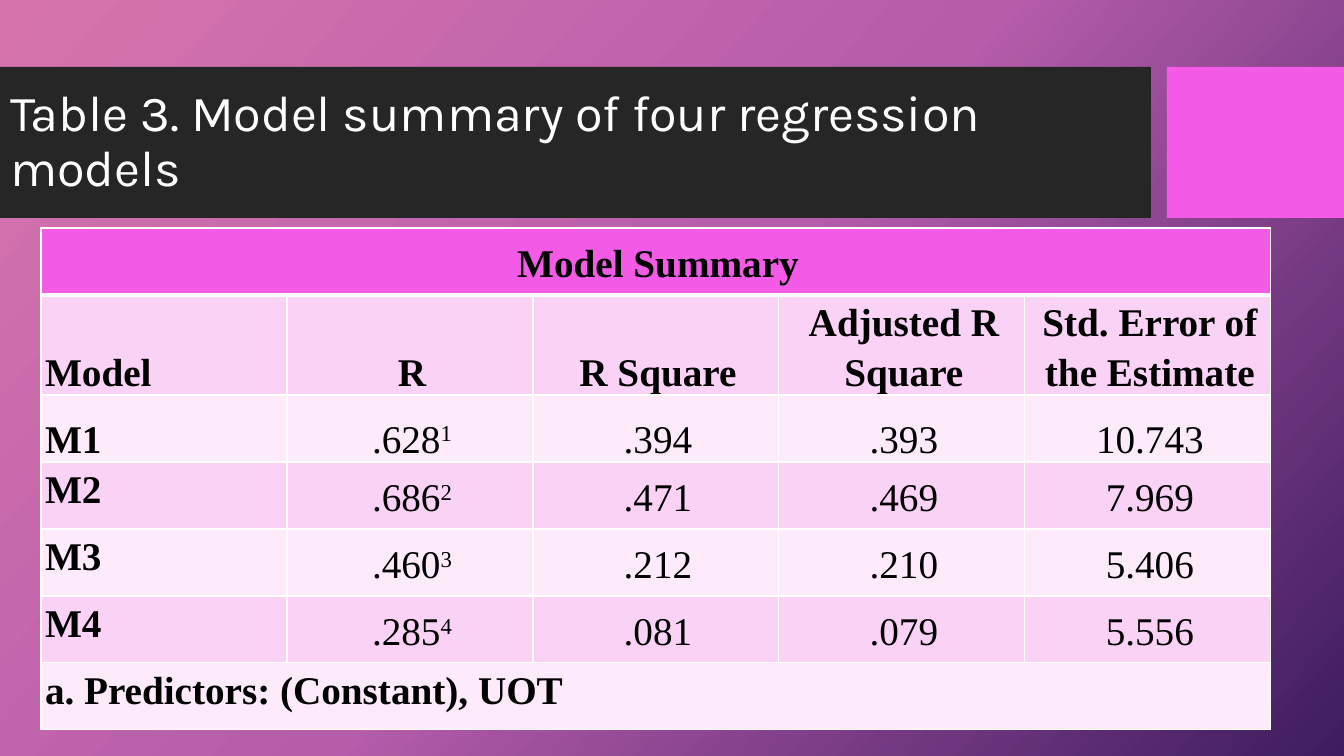
import copy

import pptx
import pptx.dml.color
import pptx.enum.shapes
import pptx.enum.text
import pptx.oxml
import pptx.oxml.ns
import pptx.util

EMU_PER_PX = 12192000 / 1344
ALIGN = pptx.enum.text.PP_ALIGN
ANCHOR = pptx.enum.text.MSO_ANCHOR

PINK = "F35AE6"
BANDS = ["FDEAFA", "FAD2F5"]
ROWS = [
    ["Model Summary"],
    ["Model", "R", "R Square", "Adjusted R Square", "Std. Error of the Estimate"],
    ["M1", (".628", "1"), ".394", ".393", "10.743"],
    ["M2", (".686", "2"), ".471", ".469", "7.969"],
    ["M3", (".460", "3"), ".212", ".210", "5.406"],
    ["M4", (".285", "4"), ".081", ".079", "5.556"],
    ["a. Predictors: (Constant), UOT"],
]
COLUMNS = 5
ROW_HEIGHT = 67
HEADING_HEIGHT = 100


def px(length):
    return pptx.util.Emu(round(length * EMU_PER_PX))


def colour(value):
    return pptx.dml.color.RGBColor.from_string(value)


def paint_background(slide):
    fill = slide.background.fill
    fill.gradient()
    fill.gradient_angle = 360 - 42
    first = slide.element.xpath(".//a:gsLst/a:gs")[0]
    first.addnext(copy.deepcopy(first))
    stops = [(0, "D774AD"), (0.5, "B55CAB"), (1, "3E1C5F")]
    for stop, (position, value) in zip(fill.gradient_stops, stops):
        stop.position = position
        stop.color.rgb = colour(value)


def add_run(para, text, font, size, value, bold=False):
    span = para.add_run()
    span.text = text
    span.font.name = font
    span.font.size = pptx.util.Pt(size)
    span.font.bold = bold
    span.font.color.rgb = colour(value)
    return span


def add_bar(slide, left, top, width, height, value):
    bar = slide.shapes.add_shape(
        pptx.enum.shapes.MSO_SHAPE.RECTANGLE, px(left), px(top), px(width), px(height))
    bar.shadow.inherit = False
    bar.fill.solid()
    bar.fill.fore_color.rgb = colour(value)
    bar.line.fill.background()


def add_title_band(slide, left, top, width, height):
    accent = 177
    gap = 16
    add_bar(slide, left, top, width - accent - gap, height, "262626")
    add_bar(slide, left + width - accent, top, accent, height, PINK)

    title = slide.shapes.title
    slide.shapes.element.append(title.element)  # bring in front of the bars
    title.left, title.top = px(left), px(top + 16)
    title.width, title.height = px(1158), px(119)
    frame = title.text_frame
    frame.word_wrap = True
    frame.auto_size = pptx.enum.text.MSO_AUTO_SIZE.NONE
    frame.vertical_anchor = ANCHOR.MIDDLE
    para = frame.paragraphs[0]
    para.alignment = ALIGN.LEFT
    para.line_spacing = 0.9
    add_run(para, "Table 3. Model summary of four regression models", "Karla", 36, "FFFFFF")


def set_borders(cell, row):
    """White rules, with a thick one between the top row and the next."""
    properties = cell._tc.get_or_add_tcPr()
    widths = {"L": 1, "R": 1, "T": 3 if row == 1 else 1, "B": 3 if row == 0 else 1}
    for side, width in widths.items():
        properties.append(pptx.oxml.parse_xml(
            f'<a:ln{side} {pptx.oxml.ns.nsdecls("a")} w="{pptx.util.Pt(width)}">'
            '<a:solidFill><a:srgbClr val="FFFFFF"/></a:solidFill>'
            f'</a:ln{side}>'))


def cell_anchor(row, column):
    if row in (1, 2):
        return ANCHOR.BOTTOM
    if row == 0 or column > 0:
        return ANCHOR.MIDDLE
    return ANCHOR.TOP


def fill_cell(cell, content, row, column):
    cell.margin_left = cell.margin_right = cell.margin_top = cell.margin_bottom = 0
    cell.vertical_anchor = cell_anchor(row, column)
    para = cell.text_frame.paragraphs[0]
    para.alignment = ALIGN.CENTER if row == 0 or column > 0 else ALIGN.LEFT
    para.line_spacing = 1.15
    indent = para._p.get_or_add_pPr()
    indent.set("marL", str(px(4)))
    indent.set("indent", "0")
    parts = content if isinstance(content, tuple) else (content,)
    bold = row < 2 or column == 0
    for index, text in enumerate(parts):
        span = add_run(para, text, "Times New Roman", 28, "000000", bold)
        if index == 1:
            span.font._element.set("baseline", "30000")


def add_summary_table(slide, left, top, width):
    heights = [HEADING_HEIGHT if row == 1 else ROW_HEIGHT for row in range(len(ROWS))]
    table = slide.shapes.add_table(
        len(ROWS), COLUMNS, px(left), px(top), px(width), px(sum(heights))).table
    for column in table.columns:
        column.width = px(width / COLUMNS)
    for row, contents in enumerate(ROWS):
        table.rows[row].height = px(heights[row])
        for column in range(COLUMNS):
            cell = table.cell(row, column)
            set_borders(cell, row)
            cell.fill.solid()
            cell.fill.fore_color.rgb = colour(PINK if row == 0 else BANDS[row % 2])
        for column, content in enumerate(contents):
            fill_cell(table.cell(row, column), content, row, column)
        if len(contents) == 1:
            table.cell(row, 0).merge(table.cell(row, COLUMNS - 1))


def main():
    deck = pptx.Presentation()
    deck.slide_width, deck.slide_height = px(1344), px(756)
    slide = deck.slides.add_slide(deck.slide_layouts.get_by_name("Title Only"))
    paint_background(slide)
    add_title_band(slide, 0, 67, 1344, 151)
    add_summary_table(slide, 41, 228, 1230)
    deck.save("out.pptx")


if __name__ == "__main__":
    main()
